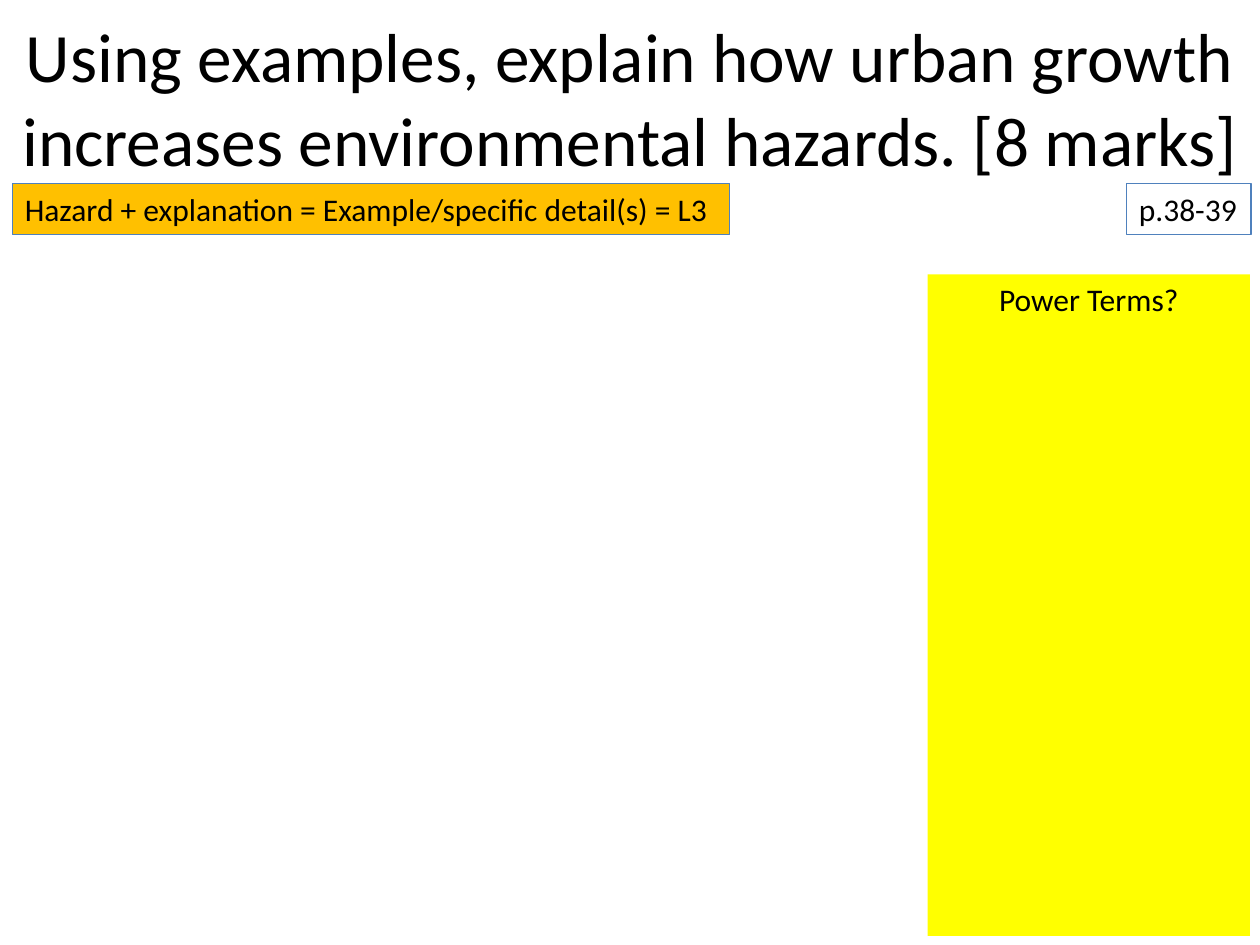
from pptx import Presentation
from pptx.dml.color import RGBColor
from pptx.enum.shapes import MSO_SHAPE
from pptx.enum.text import MSO_ANCHOR, PP_ALIGN
from pptx.util import Cm, Pt

RECTANGLE = MSO_SHAPE.RECTANGLE
TOP, MIDDLE = MSO_ANCHOR.TOP, MSO_ANCHOR.MIDDLE
LEFT, CENTER = PP_ALIGN.LEFT, PP_ALIGN.CENTER

COLOURS = {"text": "000000", "border": "4F81BD", "hint": "FFC000", "terms": "FFFF00"}

TITLE = "Using examples, explain how urban growth increases environmental hazards. [8 marks]"
TITLE_PLACE = (0, -0.03, 25.4, 3.96)

# text, (left, top, width, height) in cm, fill, border, alignment
BOXES = [
    ("p.38-39", (22.71, 3.7, 2.51, 1.03), None, "border", LEFT),
    ("Hazard + explanation = Example/specific detail(s) = L3",
     (0.25, 3.7, 14.46, 1.03), "hint", "border", LEFT),
    ("Power Terms?", (18.7, 5.53, 6.5, 13.34), "terms", None, CENTER),
]


def colour(name):
    return RGBColor.from_string(COLOURS[name])


def write(shape, text, size, align, anchor):
    frame = shape.text_frame
    frame.text = text
    frame.word_wrap = True
    frame.vertical_anchor = anchor
    para = frame.paragraphs[0]
    para.alignment = align
    font = para.runs[0].font
    for name, value in {"name": "Calibri", "size": Pt(size)}.items():
        setattr(font, name, value)
    font.color.rgb = colour("text")


def add_box(page, text, place, fill, border, align):
    box = page.shapes.add_shape(RECTANGLE, *map(Cm, place))
    box.shadow.inherit = False
    if fill:
        box.fill.solid()
        box.fill.fore_color.rgb = colour(fill)
    else:
        box.fill.background()
    if border:
        box.line.color.rgb = colour(border)
        box.line.width = Pt(0.75)
    else:
        box.line.fill.background()
    write(box, text, 18, align, TOP)


def main():
    deck = Presentation()
    deck.slide_width, deck.slide_height = Cm(25.4), Cm(19.05)
    page = deck.slides.add_slide(deck.slide_layouts[5])
    title = page.shapes.title
    for side, length in zip(("left", "top", "width", "height"), TITLE_PLACE):
        setattr(title, side, Cm(length))
    write(title, TITLE, 39.6, CENTER, MIDDLE)
    for box in BOXES:
        add_box(page, *box)
    deck.save("out.pptx")


if __name__ == "__main__":
    main()
